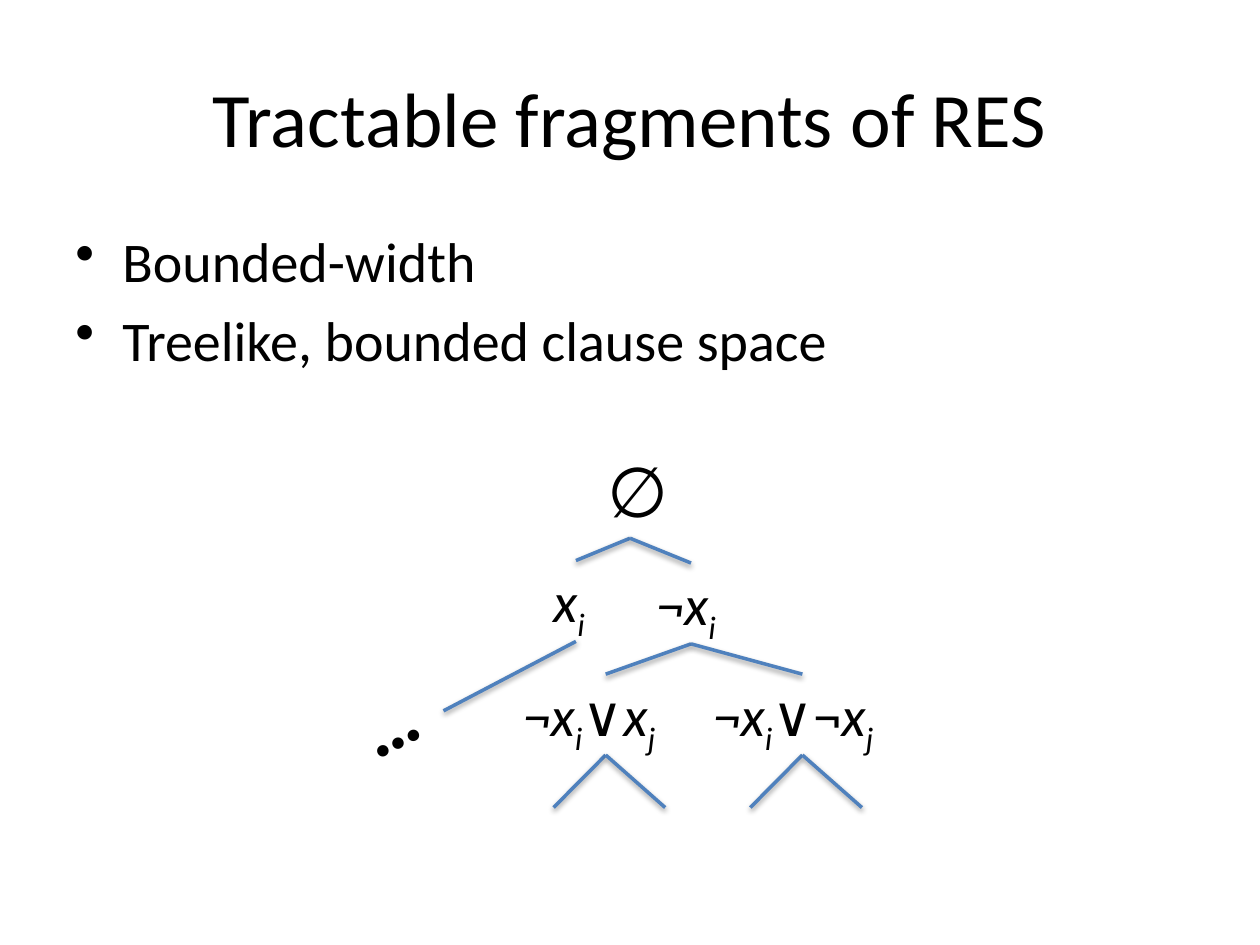
"""Build a slide on tractable fragments of RES with a small refutation tree."""
import lxml.etree
import pptx
import pptx.dml.color
import pptx.enum.shapes
import pptx.enum.text
import pptx.oxml
import pptx.oxml.ns
import pptx.util

Cm, Pt = pptx.util.Cm, pptx.util.Pt
RGB = pptx.dml.color.RGBColor.from_string
ALIGN = pptx.enum.text.PP_ALIGN
ANCHOR = pptx.enum.text.MSO_ANCHOR

THEME = {
    "font": "Calibri", "text": "000000", "line": "4F81BD", "line_width": 2,
    "title": 44, "body": 32, "root": 40, "clause": 32, "dots": 44,
}
SHADOW = (
    '<a:effectLst xmlns:a="http://schemas.openxmlformats.org/drawingml/2006/main">'
    '<a:outerShdw blurRad="40000" dist="20000" dir="5400000" rotWithShape="0">'
    '<a:srgbClr val="000000"><a:alpha val="38000"/></a:srgbClr>'
    '</a:outerShdw></a:effectLst>'
)

TITLE = "Tractable fragments of RES"
BULLETS = ["Bounded-width", "Treelike, bounded clause space"]
VAR_I = [("x", "italic"), ("i", "sub")]
VAR_J = [("x", "italic"), ("j", "sub")]
NOT_I = [("¬x", "italic"), ("i", "sub")]
NODES = {
    "root": ([("∅", "plain")], (11.99, 8.89, 1.42, 1.96), "root"),
    "pos": (VAR_I, (10.9, 11.3, 1.42, 1.63), "clause"),
    "neg": (NOT_I, (12.98, 11.35, 1.9, 1.63), "clause"),
    "left": (NOT_I + [("∨", "plain")] + VAR_J, (10.29, 13.59, 3.84, 1.63), "clause"),
    "right": (NOT_I + [("∨¬", "plain")] + VAR_J, (14.12, 13.59, 4.11, 1.63), "clause"),
}
EDGES = [("root", "pos"), ("root", "neg"), ("neg", "left"), ("neg", "right")]
DOTS_BOX, DOTS_ANGLE, DOTS_END = (6.96, 13.28, 2.44, 2.13), 333.2, (8.94, 14.33)
STUBS = [(-1.05, 1.06), (1.2, 1.06)]


def add_text(s, paragraphs, box, size, align=ALIGN.LEFT, anchor=ANCHOR.TOP,
             bullet=False, bold=False, rotation=0):
    sp = s.shapes.add_textbox(*map(Cm, box))
    sp.rotation = rotation
    tf = sp.text_frame
    tf.word_wrap = True
    tf.vertical_anchor = anchor
    for i, runs in enumerate(paragraphs):
        p = tf.paragraphs[0] if i == 0 else tf.add_paragraph()
        p.alignment = align
        if bullet:
            p.space_before = Pt(size * 0.2)
            pPr = p._p.get_or_add_pPr()
            pPr.set("marL", str(Cm(0.95)))
            pPr.set("indent", str(-Cm(0.95)))
            bu = lxml.etree.SubElement(pPr, pptx.oxml.ns.qn("a:buChar"))
            bu.set("char", "•")
        for text, style in runs:
            r = p.add_run()
            r.text = text
            r.font.name = THEME["font"]
            r.font.size = Pt(size)
            r.font.bold = bold
            r.font.italic = style != "plain"
            r.font.color.rgb = RGB(THEME["text"])
            if style == "sub":
                r._r.get_or_add_rPr().set("baseline", "-25000")


def add_edge(s, start, end):
    line = s.shapes.add_connector(pptx.enum.shapes.MSO_CONNECTOR.STRAIGHT,
                                  *map(Cm, start + end))
    line.line.color.rgb = RGB(THEME["line"])
    line.line.width = Pt(THEME["line_width"])
    line._element.spPr.append(pptx.oxml.parse_xml(SHADOW))


def top(name):
    x, y, w, h = NODES[name][1]
    return x + w / 2, y


def bottom(name):
    x, y, w, h = NODES[name][1]
    return x + w / 2, y + h


def main():
    prs = pptx.Presentation()
    prs.slide_width, prs.slide_height = Cm(25.4), Cm(19.05)
    s = prs.slides.add_slide(prs.slide_layouts[6])
    add_text(s, [[(TITLE, "plain")]], (1.27, 0.76, 22.86, 3.18), THEME["title"],
             align=ALIGN.CENTER, anchor=ANCHOR.MIDDLE)
    add_text(s, [[(text, "plain")] for text in BULLETS], (1.27, 4.45, 22.86, 12.57),
             THEME["body"], bullet=True)
    for runs, box, kind in NODES.values():
        add_text(s, [runs], box, THEME[kind])
    for parent, child in EDGES:
        add_edge(s, bottom(parent), top(child))
    add_edge(s, bottom("pos"), DOTS_END)
    for name in ("left", "right"):
        x, y = bottom(name)
        for dx, dy in STUBS:
            add_edge(s, (x, y), (x + dx, y + dy))
    add_text(s, [[("…", "plain")]], DOTS_BOX, THEME["dots"], bold=True,
             rotation=DOTS_ANGLE)
    prs.save("out.pptx")


if __name__ == "__main__":
    main()
